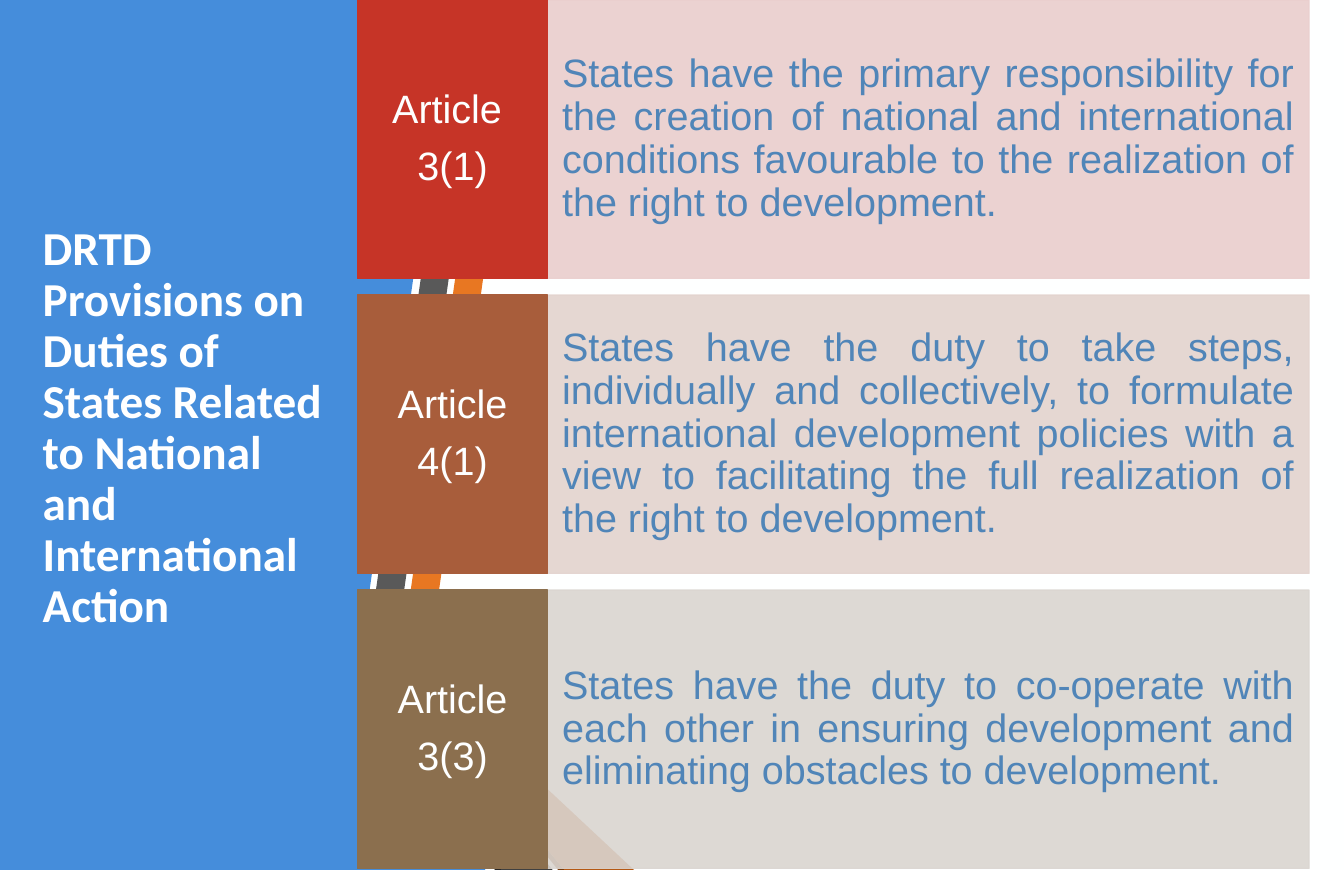
import pptx
import pptx.dml.color
import pptx.enum.shapes
import pptx.enum.text
import pptx.oxml
import pptx.util
from pptx.oxml import ns

RGBColor = pptx.dml.color.RGBColor
Align = pptx.enum.text.PP_ALIGN

PAPER = RGBColor(0xFE, 0xFF, 0xFF)
WHITE = RGBColor(0xFF, 0xFF, 0xFF)
BLUE = RGBColor(0x45, 0x8D, 0xDB)
STEEL = RGBColor(0x50, 0x85, 0xB8)
ORANGE = RGBColor(0xE8, 0x77, 0x22)
RUST = RGBColor(0xB5, 0x58, 0x13)
BROWN = RGBColor(0x78, 0x3B, 0x0D)
GREY = RGBColor(0x59, 0x59, 0x59)
CHARCOAL = RGBColor(0x40, 0x40, 0x40)
BLACK = RGBColor(0x26, 0x26, 0x26)
RED = RGBColor(0xC6, 0x34, 0x27)
SIENNA = RGBColor(0xA8, 0x5D, 0x3B)
UMBER = RGBColor(0x8B, 0x6F, 0x4E)
PINK = RGBColor(0xEA, 0xCE, 0xCD)
BLUSH = RGBColor(0xE3, 0xD3, 0xCE)
STONE = RGBColor(0xDA, 0xD5, 0xD0)

COLUMNS, ROWS = 17, 11
CARD_HEIGHT, CARD_PITCH = 3.52, 3.73
LABEL_LEFT, LABEL_WIDTH = 4.52, 2.41
DUTY_LEFT, DUTY_WIDTH = 6.92, 9.64

RIBBONS = [
    (BLUE, [(4.5, 0), (5.72, 0), (4.54, 8.43), (6.14, 11), (0, 11), (0, 0)]),
    (ORANGE, [(5.05, 8.48), (5.4, 8.55), (6.61, 0), (6.26, 0)]),
    (GREY, [(6.18, 0), (5.83, 0), (4.62, 8.4), (4.97, 8.46)]),
    (BLACK, [(4.62, 8.4), (6.26, 11), (6.34, 11)]),
    (BROWN, [(5.05, 8.49), (7.06, 11), (7.14, 11)]),
    (RUST, [(5.05, 8.49), (7.14, 11), (8.02, 11), (5.4, 8.55), (5.05, 8.48)]),
    (CHARCOAL, [(6.99, 11), (4.97, 8.46), (4.62, 8.4), (6.34, 11)]),
]

ARTICLES = [
    ("Article \n3(1)", RED, PINK,
     "States have the primary responsibility for the creation of national and "
     "international conditions favourable to the realization of the right to "
     "development. "),
    ("Article\n4(1)", SIENNA, BLUSH,
     "States have the duty to take steps, individually and collectively, to "
     "formulate international development policies with a view to facilitating "
     "the full realization of the right to development. "),
    ("Article\n3(3)", UMBER, STONE,
     "States have the duty to co-operate with each other in ensuring "
     "development and eliminating obstacles to development."),
]


class Page:
    text_font, text_size = "Arial", 36
    title_font, title_size = "Calibri", 43
    line_spacing = 0.9

    def __init__(self, deck):
        self.column = deck.slide_width / COLUMNS
        self.row = deck.slide_height / ROWS
        self.slide = deck.slides.add_slide(deck.slide_layouts[5])
        self.slide.background.fill.solid()
        self.slide.background.fill.fore_color.rgb = PAPER

    def point(self, column, row):
        return round(column * self.column), round(row * self.row)

    def set_text(self, frame, text, font, size, color, align, inset, bold=False):
        frame.text = text
        frame.word_wrap = True
        frame.auto_size = pptx.enum.text.MSO_AUTO_SIZE.NONE
        frame.vertical_anchor = pptx.enum.text.MSO_ANCHOR.MIDDLE
        frame.margin_left = frame.margin_right = round(inset * self.column)
        frame.margin_top = frame.margin_bottom = 0
        for para in frame.paragraphs:
            para.alignment = align
            para.line_spacing = self.line_spacing
            para.space_before = pptx.util.Pt(0)
            for span in para.runs:
                span.font.name = font
                span.font.size = pptx.util.Pt(size)
                span.font.bold = bold
                span.font.color.rgb = color

    def ribbon(self, color, corners):
        start, *others = [self.point(*corner) for corner in corners]
        builder = self.slide.shapes.build_freeform(*start)
        builder.add_line_segments(others, close=True)
        shape = builder.convert_to_shape()
        shape.shadow.inherit = False
        shape.fill.solid()
        shape.fill.fore_color.rgb = color
        shape.line.fill.background()

    def title(self, text, left, top, width, height):
        box = self.slide.shapes.title
        box.left, box.top = self.point(left, top)
        box.width, box.height = self.point(width, height)
        self.set_text(box.text_frame, text, self.title_font, self.title_size,
                      WHITE, Align.LEFT, 0.1, bold=True)
        self.slide.shapes.element.append(box.element)

    def panel(self, text, left, top, width, fill, color, align, inset, opacity=100):
        box = self.slide.shapes.add_shape(
            pptx.enum.shapes.MSO_SHAPE.RECTANGLE,
            *self.point(left, top), *self.point(width, CARD_HEIGHT))
        box.shadow.inherit = False
        box.fill.solid()
        box.fill.fore_color.rgb = fill
        box.line.color.rgb = fill
        box.line.width = pptx.util.Pt(1)
        if opacity < 100:
            for tint in box.element.spPr.iter(ns.qn("a:srgbClr")):
                alpha = pptx.oxml.parse_xml(
                    f'<a:alpha {ns.nsdecls("a")} val="{opacity * 1000}"/>')
                tint.append(alpha)
        self.set_text(box.text_frame, text, self.text_font, self.text_size,
                      color, align, inset)
        for para in box.text_frame.paragraphs:
            para.space_after = pptx.util.Pt(0.35 * self.text_size)


def main():
    deck = pptx.Presentation()
    deck.slide_width = pptx.util.Inches(COLUMNS)
    deck.slide_height = pptx.util.Inches(ROWS)
    page = Page(deck)
    for color, corners in RIBBONS:
        page.ribbon(color, corners)
    page.title("DRTD Provisions on Duties of States Related to National and "
               "International Action", 0.44, 1.32, 3.88, 8.19)
    for index, (label, strong, pale, duty) in enumerate(ARTICLES):
        top = index * CARD_PITCH
        page.panel(duty, DUTY_LEFT, top, DUTY_WIDTH, pale, STEEL,
                   Align.JUSTIFY, 0.19, opacity=90)
        page.panel(label, LABEL_LEFT, top, LABEL_WIDTH, strong, PAPER,
                   Align.CENTER, 0.13)
    deck.save("out.pptx")


if __name__ == "__main__":
    main()
